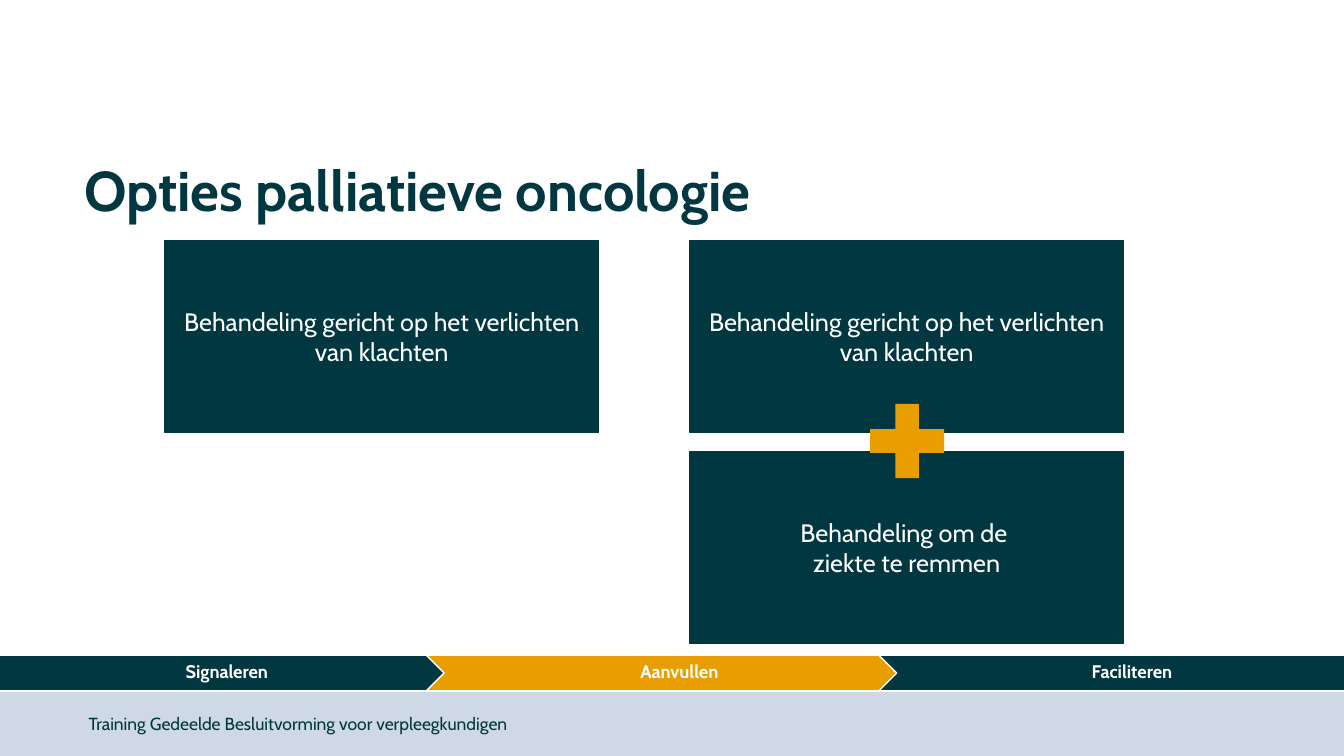
from pptx import Presentation, util as u
from pptx.dml.color import RGBColor
from pptx.enum import shapes, text

PX = 9525  # EMU per px, slide of 1280 x 720 px
FONT = "Cabin"
TEAL = RGBColor(0x00, 0x37, 0x41)
FOOTER_TEAL = RGBColor(0x00, 0x37, 0x3E)
ORANGE = RGBColor(0xE8, 0x9E, 0x00)
PALE_BLUE = RGBColor(0xCE, 0xD9, 0xE5)
WHITE = RGBColor(0xFF, 0xFF, 0xFF)

RELIEF = "Behandeling gericht op het verlichten van klachten"
LEFT_X, RIGHT_X = 157, 657
TOP_Y, BOTTOM_Y = 229, 430
BOX_WIDTH, BOX_HEIGHT = 413, 183
STEP_X, STEP_PITCH = -25, 431


def add_shape(slide, kind, box, fill, line=None):
    shape = slide.shapes.add_shape(kind, *(n * PX for n in box))
    shape.shadow.inherit = False
    shape.fill.solid()
    shape.fill.fore_color.rgb = fill
    if line is None:
        shape.line.fill.background()
    else:
        shape.line.color.rgb = line
        shape.line.width = u.Pt(1)
    return shape


def write(shape, wording, size, color, bold=False,
          align=text.PP_ALIGN.CENTER, spacing=1.0):
    frame = shape.text_frame
    frame.word_wrap = True
    frame.vertical_anchor = text.MSO_ANCHOR.MIDDLE
    frame.text = wording
    for paragraph in frame.paragraphs:
        paragraph.alignment = align
        paragraph.line_spacing = spacing
        font = paragraph.font
        font.name, font.size, font.bold = FONT, u.Pt(size), bold
        font.color.rgb = color


def add_label(slide, box, wording, size, color, **style):
    label = slide.shapes.add_textbox(*(n * PX for n in box))
    write(label, wording, size, color, align=text.PP_ALIGN.LEFT, **style)


def add_option(slide, left, top, wording):
    option = add_shape(slide, shapes.MSO_SHAPE.RECTANGLE,
                       (left, top, BOX_WIDTH, BOX_HEIGHT), TEAL, TEAL)
    write(option, wording, 18, WHITE)


def add_step(slide, index, wording, fill):
    step = add_shape(slide, shapes.MSO_SHAPE.CHEVRON,
                     (STEP_X + index * STEP_PITCH, 624, 478, 34), fill, WHITE)
    frame = step.text_frame
    frame.margin_left = 6 * PX
    frame.margin_right = frame.margin_top = frame.margin_bottom = 2 * PX
    write(step, wording, 13, WHITE, bold=True, spacing=0.9)


def main():
    presentation = Presentation()
    presentation.slide_width = 1280 * PX
    presentation.slide_height = 720 * PX
    slide = presentation.slides.add_slide(presentation.slide_layouts[6])

    # Footer band and title
    add_shape(slide, shapes.MSO_SHAPE.RECTANGLE, (0, 659, 1280, 61), PALE_BLUE)
    add_label(slide, (71, 115, 1130, 139), "Opties palliatieve oncologie",
              40, TEAL, bold=True, spacing=0.9)

    # Treatment options, with a plus joining the right-hand pair
    add_option(slide, LEFT_X, TOP_Y, RELIEF)
    add_option(slide, RIGHT_X, TOP_Y, RELIEF)
    add_option(slide, RIGHT_X, BOTTOM_Y, "Behandeling om de \nziekte te remmen")
    add_shape(slide, shapes.MSO_SHAPE.MATH_PLUS, (816, 372, 96, 96), ORANGE)

    # Progress steps
    steps = [("Signaleren", TEAL), ("Aanvullen", ORANGE), ("Faciliteren", TEAL)]
    for index, (wording, fill) in enumerate(steps):
        add_step(slide, index, wording, fill)

    # Footer text
    add_label(slide, (75, 670, 495, 38),
              "Training Gedeelde Besluitvorming voor verpleegkundigen",
              12.5, FOOTER_TEAL)

    presentation.save("out.pptx")


if __name__ == "__main__":
    main()
